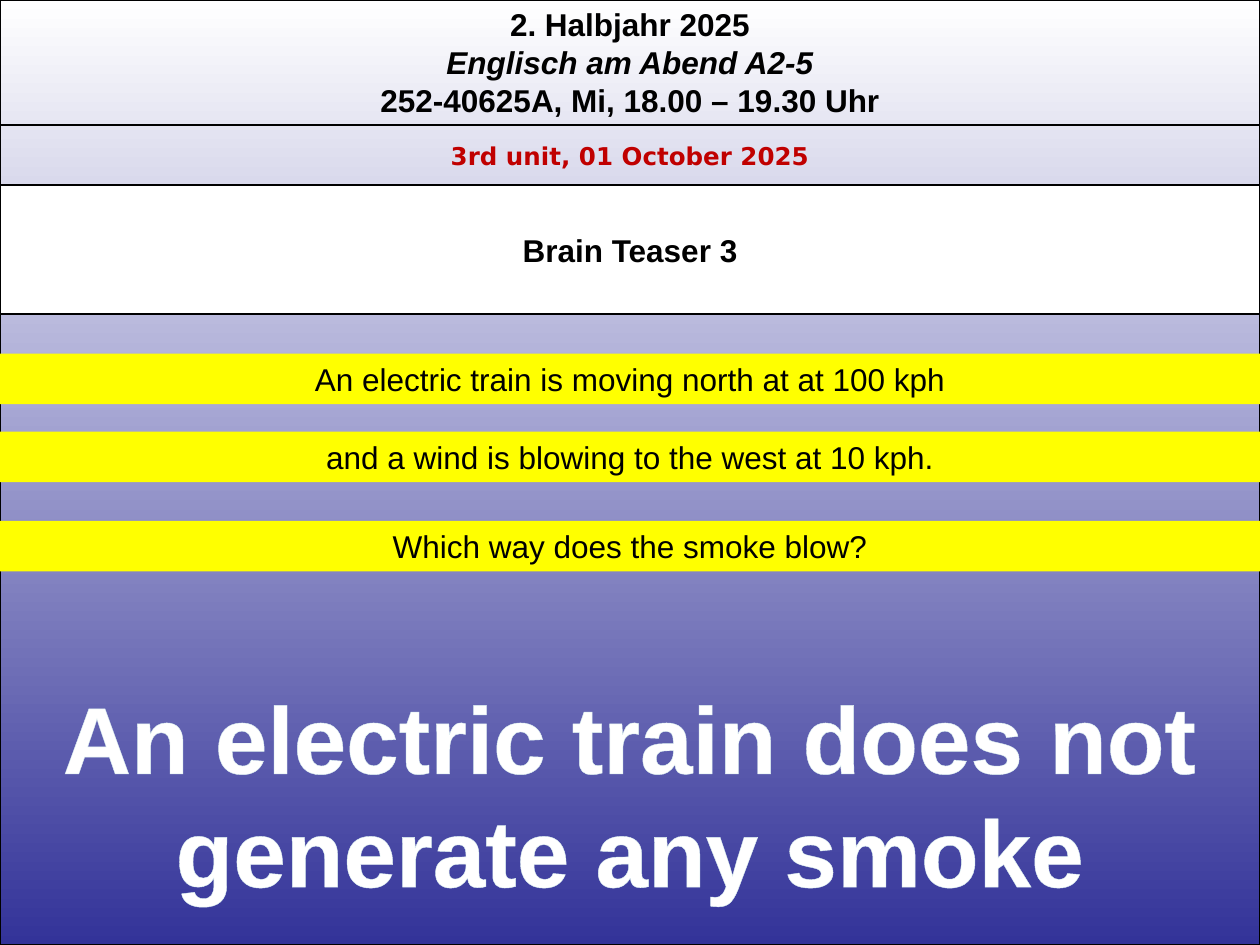
from collections import namedtuple
from dataclasses import dataclass

from lxml.etree import SubElement
from pptx import Presentation
from pptx.dml.color import RGBColor as Rgb
from pptx.enum.shapes import MSO_CONNECTOR as Connector, MSO_SHAPE as Shape
from pptx.enum.text import MSO_ANCHOR as Anchor, PP_ALIGN as Align
from pptx.oxml import parse_xml
from pptx.oxml.ns import nsdecls, qn
from pptx.util import Cm, Pt

Box = namedtuple("Box", "left top width height")


@dataclass(frozen=True)
class Theme:
    black: Rgb = Rgb(0, 0, 0)
    white: Rgb = Rgb(255, 255, 255)
    indigo: Rgb = Rgb(0x33, 0x33, 0x99)
    yellow: Rgb = Rgb(255, 255, 0)
    red: Rgb = Rgb(0xC0, 0, 0)
    glow: str = "DAEDEF"
    font: str = "Arial"
    date_font: str = "DejaVu Sans"
    body: Pt = Pt(18)
    date: Pt = Pt(14)
    answer: Pt = Pt(54)
    rule: Pt = Pt(0.75)


THEME = Theme()
WIDTH, HEIGHT = Cm(25.4), Cm(19.05)
BODY = {"name": THEME.font, "size": THEME.body, "bold": False, "italic": False}


def band(top, height):
    return Box(0, Cm(top), WIDTH, Cm(height))


def set_all(target, values):
    for name, value in values.items():
        setattr(target, name, value)


def write(shape, lines, color, anchor=Anchor.TOP):
    frame = shape.text_frame
    set_all(frame, {"word_wrap": True, "vertical_anchor": anchor})
    frame.text = "\n".join(text for text, _ in lines)
    for para, (_, style) in zip(frame.paragraphs, lines):
        para.alignment = Align.CENTER
        span = para.runs[0]
        set_all(span.font, BODY | style)
        span.font.color.rgb = color
    return frame


def outline(line):
    line.color.rgb = THEME.black
    line.width = THEME.rule


def add_background(page, box):
    panel = page.shapes.add_shape(Shape.RECTANGLE, *box)
    panel.shadow.inherit = False
    panel.fill.gradient()
    panel.fill.gradient_angle = 270
    for stop, color in zip(panel.fill.gradient_stops, (THEME.white, THEME.indigo)):
        stop.color.rgb = color
    outline(panel.line)


def add_header(page, box):
    course = page.shapes.add_textbox(*box)
    write(course, [
        ("2. Halbjahr 2025", {"bold": True}),
        ("Englisch am Abend A2-5", {"bold": True, "italic": True}),
        ("252-40625A, Mi, 18.00 – 19.30 Uhr", {"bold": True}),
    ], THEME.black)
    bottom = box.top + box.height
    rule = page.shapes.add_connector(
        Connector.STRAIGHT, box.left, bottom, box.left + box.width, bottom)
    outline(rule.line)
    SubElement(rule.element.spPr, qn("a:effectLst"))


def add_title(page, box):
    title = page.shapes.title
    set_all(title, box._asdict())
    title.fill.solid()
    title.fill.fore_color.rgb = THEME.white
    outline(title.line)
    write(title, [("Brain Teaser 3", {"bold": True})], THEME.black, Anchor.MIDDLE)


def add_date(page, box):
    style = {"name": THEME.date_font, "size": THEME.date, "bold": True}
    write(page.shapes.add_textbox(*box),
          [("3rd unit, 01 October 2025", style)], THEME.red)


def add_riddle_line(page, box, text):
    strip = page.shapes.add_shape(Shape.RECTANGLE, *box)
    strip.shadow.inherit = False
    strip.fill.solid()
    strip.fill.fore_color.rgb = THEME.yellow
    strip.line.fill.background()
    write(strip, [(text, {})], THEME.black)


def add_answer(page, box):
    frame = write(
        page.shapes.add_textbox(*box),
        [("An electric train does not generate any smoke",
          {"size": THEME.answer, "bold": True})], THEME.white)
    edge = parse_xml(
        f'<a:ln {nsdecls("a")} w="{Pt(0.8)}"><a:solidFill>'
        f'<a:srgbClr val="{THEME.glow}"/></a:solidFill></a:ln>')
    frame.paragraphs[0].runs[0].font._element.insert(0, edge)


def main():
    deck = Presentation()
    set_all(deck, {"slide_width": WIDTH, "slide_height": HEIGHT})
    page = deck.slides.add_slide(deck.slide_layouts[5])
    add_background(page, Box(0, 0, WIDTH, HEIGHT))
    add_header(page, band(-0.02, 2.54))
    title = page.shapes.title.element
    title.getparent().append(title)
    add_title(page, band(3.73, 2.6))
    add_date(page, band(2.72, 0.86))
    riddle = {
        7.13: "An electric train is moving north at at 100 kph",
        8.7: "and a wind is blowing to the west at 10 kph.",
        10.5: "Which way does the smoke blow?",
    }
    for top, text in riddle.items():
        add_riddle_line(page, band(top, 1.02), text)
    add_answer(page, band(13.57, 4.88))
    deck.save("out.pptx")


if __name__ == "__main__":
    main()
